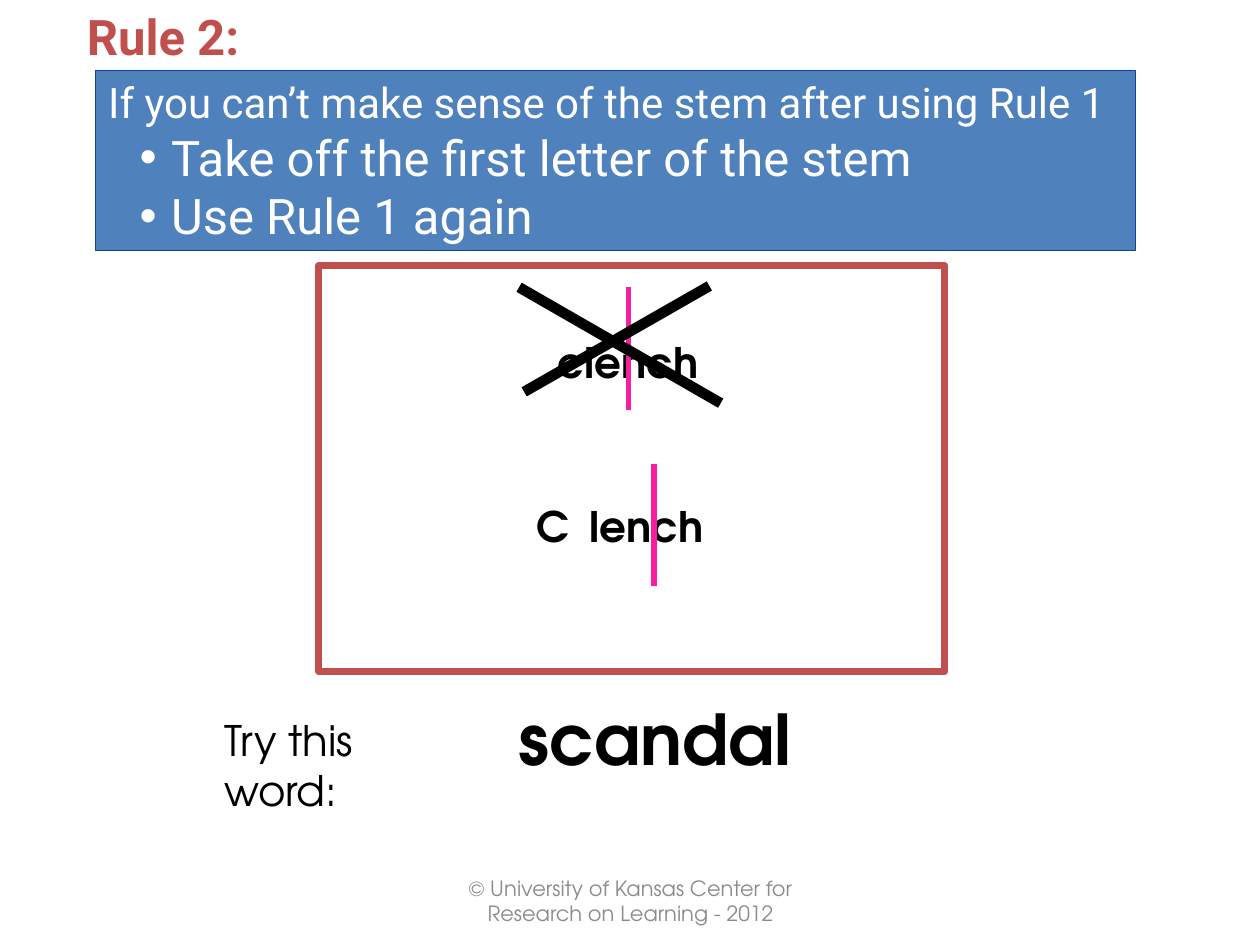
import pptx
import pptx.dml.color
import pptx.enum.shapes
import pptx.enum.text
import pptx.oxml.ns
import pptx.util
from lxml import etree

COLUMNS, ROWS = 100, 75
CELL = pptx.util.Inches(0.1)
PLAIN, WORD = "Roboto", "TeX Gyre Adventor"
RED, BLUE, PINK, BLACK = "C0504D", "4F81BD", "F71FA0", "000000"
ALIGN = pptx.enum.text.PP_ALIGN
ANCHOR = pptx.enum.text.MSO_ANCHOR


def color(value):
    return pptx.dml.color.RGBColor.from_string(value)


def grid(*cells):
    return [round(cell * CELL) for cell in cells]


def add_element(parent, tag, **attributes):
    return etree.SubElement(parent, pptx.oxml.ns.qn(tag), attributes)


def write(frame, text, font=WORD, size=24, ink=BLACK, bold=False,
          align=ALIGN.LEFT, bullet=False, tab=None):
    para = frame.paragraphs[0]
    if para.text:
        para = frame.add_paragraph()
    para.alignment = align
    properties = para._p.get_or_add_pPr()
    if bullet:
        para.level = 1
        properties.set("marL", str(pptx.util.Inches(0.5)))
        properties.set("indent", str(pptx.util.Inches(-0.25)))
        add_element(properties, "a:buFont", typeface="Arial")
        add_element(properties, "a:buChar", char="•")
    if tab:
        stops = add_element(properties, "a:tabLst")
        add_element(stops, "a:tab", pos=str(pptx.util.Inches(tab)), algn="l")
    span = para.add_run()
    span.text = text
    span.font.name = font
    span.font.size = pptx.util.Pt(size)
    span.font.bold = bold
    span.font.color.rgb = color(ink)


def add_title(page, text, cells):
    title = page.shapes.title
    title.left, title.top, title.width, title.height = grid(*cells)
    frame = title.text_frame
    frame.word_wrap = False
    frame.auto_size = pptx.enum.text.MSO_AUTO_SIZE.NONE
    frame.vertical_anchor = ANCHOR.TOP
    write(frame, text, font=PLAIN, size=28, ink=RED, bold=True)


def add_label(page, text, cells, anchor=ANCHOR.TOP, **style):
    frame = page.shapes.add_textbox(*grid(*cells)).text_frame
    frame.word_wrap = True
    frame.vertical_anchor = anchor
    write(frame, text, **style)


def add_panel(page, cells, edge, width, fill=None):
    panel = page.shapes.add_shape(
        pptx.enum.shapes.MSO_SHAPE.RECTANGLE, *grid(*cells))
    panel.shadow.inherit = False
    if fill:
        panel.fill.solid()
        panel.fill.fore_color.rgb = color(fill)
    else:
        panel.fill.background()
    panel.line.color.rgb = color(edge)
    panel.line.width = pptx.util.Pt(width)
    return panel


def add_rule(page, cells, heading, steps):
    frame = add_panel(page, cells, "124199", 0, fill=BLUE).text_frame
    frame.word_wrap = True
    frame.vertical_anchor = ANCHOR.TOP
    write(frame, heading, font=PLAIN, ink="FFFFFF")
    for step in steps:
        write(frame, step, font=PLAIN, size=28, ink="FFFFFF", bullet=True)


def add_stroke(page, start, end, ink, width):
    stroke = page.shapes.add_connector(
        pptx.enum.shapes.MSO_CONNECTOR.STRAIGHT, *grid(*start, *end))
    stroke.line.color.rgb = color(ink)
    stroke.line.width = pptx.util.Pt(width)
    add_element(stroke._element.spPr, "a:effectLst")


def main():
    deck = pptx.Presentation()
    deck.slide_width, deck.slide_height = grid(COLUMNS, ROWS)
    page = deck.slides.add_slide(deck.slide_layouts[5])

    add_rule(page, (7.6, 5.6, 82.5, 14.3),
             "If you can’t make sense of the stem after using Rule 1",
             ["Take off the first letter of the stem", "Use Rule 1 again"])
    add_title(page, "Rule 2:", (5.9, 0, 15, 5.7))
    add_panel(page, (25.3, 21.1, 49.7, 32.2), RED, 4)

    add_label(page, "clench", (43.3, 26.2, 24.4, 5), bold=True)
    add_label(page, "C\tlench", (41.6, 39.2, 24.4, 5), bold=True, tab=0.42)
    for column, row in [(51.9, 36.8), (49.9, 22.8)]:
        add_stroke(page, (column, row), (column, row + 9.7), PINK, 3)
    for start, end in [((41.2, 22.8), (57.2, 32)), ((41.6, 31.1), (56.3, 22.7))]:
        add_stroke(page, start, end, BLACK, 6)

    add_label(page, "scandal", (40.2, 54.7, 32.3, 7.7), size=40, bold=True)
    add_label(page, "Try this word:", (16.8, 56.2, 20.6, 5))
    add_label(page, "© University of Kansas Center for Research on Learning - 2012",
              (34.2, 69.5, 31.7, 4), anchor=ANCHOR.MIDDLE, size=12,
              ink="8C8C8C", align=ALIGN.CENTER)
    deck.save("out.pptx")


if __name__ == "__main__":
    main()
